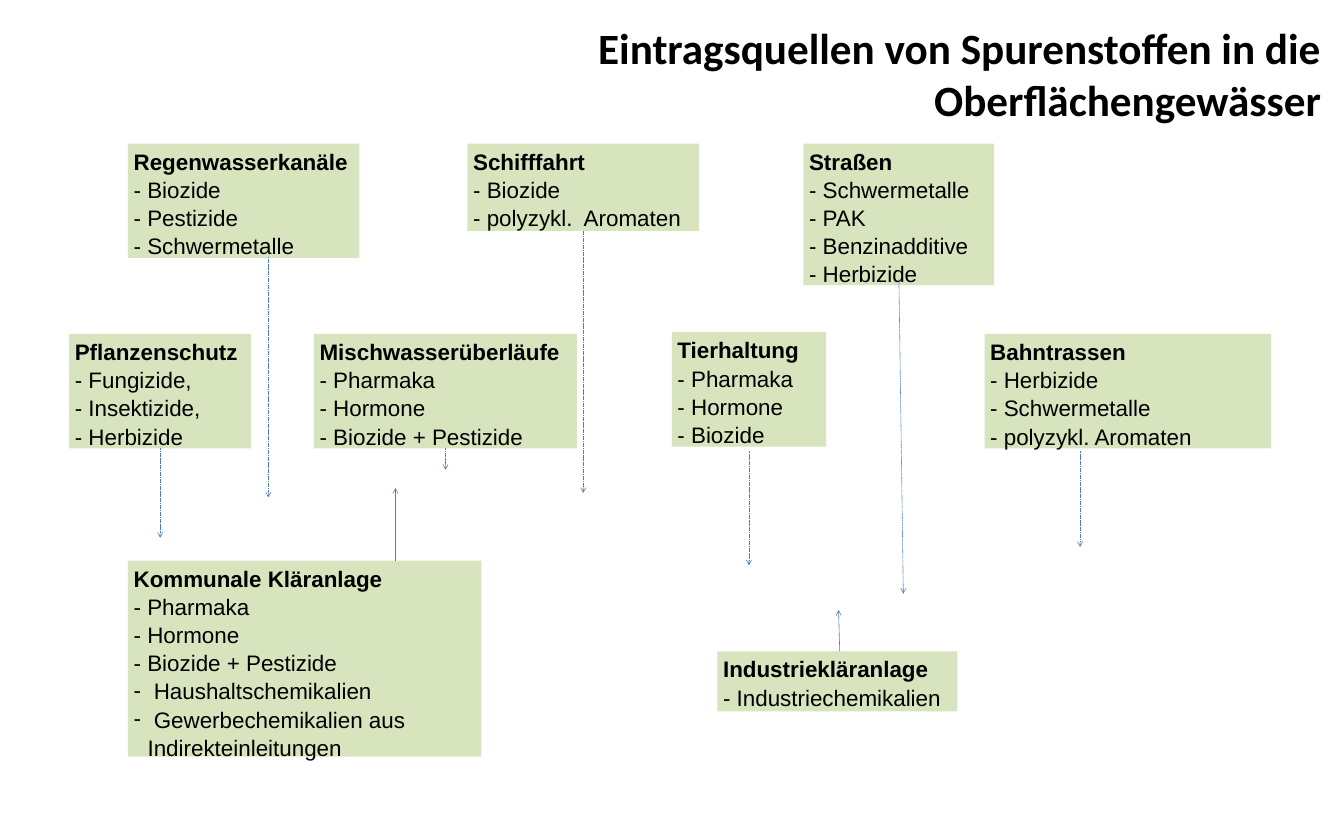
from pptx import Presentation
from pptx.dml.color import RGBColor
from pptx.enum.dml import MSO_LINE
from pptx.enum.shapes import MSO_CONNECTOR, MSO_SHAPE
from pptx.enum.text import MSO_ANCHOR, PP_ALIGN
from pptx.oxml.ns import qn
from pptx.util import Pt
from lxml import etree

# Content
COLORS = {"text": "000000", "box": "D7E4BD", "arrow": "4B7EBC"}
TITLE = "Eintragsquellen von Spurenstoffen in die Oberflächengewässer"
BOTTOM = 2

# Heading: left, top, width, number of lines, items (a leading space marks a hanging bullet)
SOURCES = {
    "Kommunale Kläranlage": (160, 701, 442, 7, [
        "- Pharmaka", "- Hormone", "- Biozide + Pestizide",
        " Haushaltschemikalien", " Gewerbechemikalien aus Indirekteinleitungen"]),
    "Industriekläranlage": (897, 814.5, 300, 2, ["- Industriechemikalien"]),
    "Pflanzenschutz": (86.5, 417.5, 227.5, 4, ["- Fungizide,", "- Insektizide,", "- Herbizide"]),
    "Mischwasserüberläufe": (392.5, 417.5, 329, 4, [
        "- Pharmaka", "- Hormone", "- Biozide + Pestizide"]),
    "Schifffahrt": (584.5, 179.5, 289.5, 3, ["- Biozide", "- polyzykl.  Aromaten"]),
    "Tierhaltung": (840, 415.5, 193, 4, ["- Pharmaka", "- Hormone", "- Biozide"]),
    "Bahntrassen": (1231, 417.5, 358.5, 4, [
        "- Herbizide", "- Schwermetalle", "- polyzykl. Aromaten"]),
    "Regenwasserkanäle": (160, 179.5, 289.5, 4, ["- Biozide", "- Pestizide", "- Schwermetalle"]),
    "Straßen": (1004.5, 179.5, 238.5, 5, [
        "- Schwermetalle", "- PAK", "- Benzinadditive", "- Herbizide"]),
}

# Arrows from the bottom middle of a box: heading, y of the tip
JOINED_ARROWS = [("Pflanzenschutz", 672.5), ("Mischwasserüberläufe", 587.5), ("Schifffahrt", 616.5)]

# Other arrows: start x, start y, tip x, tip y, dashed
FREE_ARROWS = [
    (494.5, 701, 494.5, 610.5, False),
    (1050, 814.5, 1048.5, 763, False),
    (936.5, 564.5, 936.5, 707, True),
    (1350.5, 564.5, 1350.5, 684, True),
    (1124, 349, 1129.5, 742.5, True),
    (335.5, 321, 335.5, 622, True),
]

LINE_HEIGHT, PADDING, HANGING = 34, 7.2, 17.5


def rgb(name):
    return RGBColor.from_string(COLORS[name])


def style(paragraph, font, size, bold):
    for run in paragraph.runs:
        run.font.name = font
        run.font.size = Pt(size)
        run.font.bold = bold
        run.font.color.rgb = rgb("text")


def add_hanging_bullet(paragraph):
    properties = paragraph._p.get_or_add_pPr()
    properties.set("marL", str(Pt(HANGING)))
    properties.set("indent", str(-Pt(HANGING)))
    etree.SubElement(properties, qn("a:buFont")).set("typeface", "Arial")
    etree.SubElement(properties, qn("a:buChar")).set("char", "-")


def add_source(slide, heading, left, top, width, lines, items):
    height = PADDING + lines * LINE_HEIGHT
    box = slide.shapes.add_shape(
        MSO_SHAPE.RECTANGLE, Pt(left), Pt(top), Pt(width), Pt(height))
    box.shadow.inherit = False
    box.fill.solid()
    box.fill.fore_color.rgb = rgb("box")
    box.line.fill.background()
    frame = box.text_frame
    frame.word_wrap = True
    frame.vertical_anchor = MSO_ANCHOR.TOP
    frame.text = "\n".join([heading, *items])
    for paragraph in frame.paragraphs:
        paragraph.alignment = PP_ALIGN.LEFT
        paragraph.line_spacing = 1.05
        if paragraph.text.startswith(" "):
            add_hanging_bullet(paragraph)
        style(paragraph, "Arial", 28, paragraph.text == heading)
    return box


def add_arrow(slide, x, y, tip_x, tip_y, dashed):
    arrow = slide.shapes.add_connector(
        MSO_CONNECTOR.STRAIGHT, Pt(x), Pt(y), Pt(tip_x), Pt(tip_y))
    arrow.line.color.rgb = rgb("arrow")
    arrow.line.width = Pt(0.75)
    if dashed:
        arrow.line.dash_style = MSO_LINE.SQUARE_DOT
    etree.SubElement(arrow.line._get_or_add_ln(), qn("a:tailEnd")).set("type", "arrow")
    etree.SubElement(arrow._element.spPr, qn("a:effectLst"))
    return arrow


def main():
    presentation = Presentation()
    presentation.slide_width, presentation.slide_height = Pt(1680.5), Pt(1050.5)
    slide = presentation.slides.add_slide(presentation.slide_layouts[6])

    # Title
    title = slide.shapes.add_textbox(Pt(494.5), Pt(26.5), Pt(1164.5), Pt(130.5)).text_frame
    title.word_wrap = True
    title.vertical_anchor = MSO_ANCHOR.MIDDLE
    title.text = TITLE
    title.paragraphs[0].alignment = PP_ALIGN.RIGHT
    style(title.paragraphs[0], "Calibri", 54, True)

    # Source boxes
    boxes = {heading: add_source(slide, heading, *source) for heading, source in SOURCES.items()}

    # Arrows
    for heading, tip_y in JOINED_ARROWS:
        left, top, width, lines, _ = SOURCES[heading]
        middle = left + width / 2
        bottom = top + PADDING + lines * LINE_HEIGHT
        arrow = add_arrow(slide, middle, bottom, middle, tip_y, True)
        arrow.begin_connect(boxes[heading], BOTTOM)
    for ends in FREE_ARROWS:
        add_arrow(slide, *ends)

    presentation.save("out.pptx")


if __name__ == "__main__":
    main()
